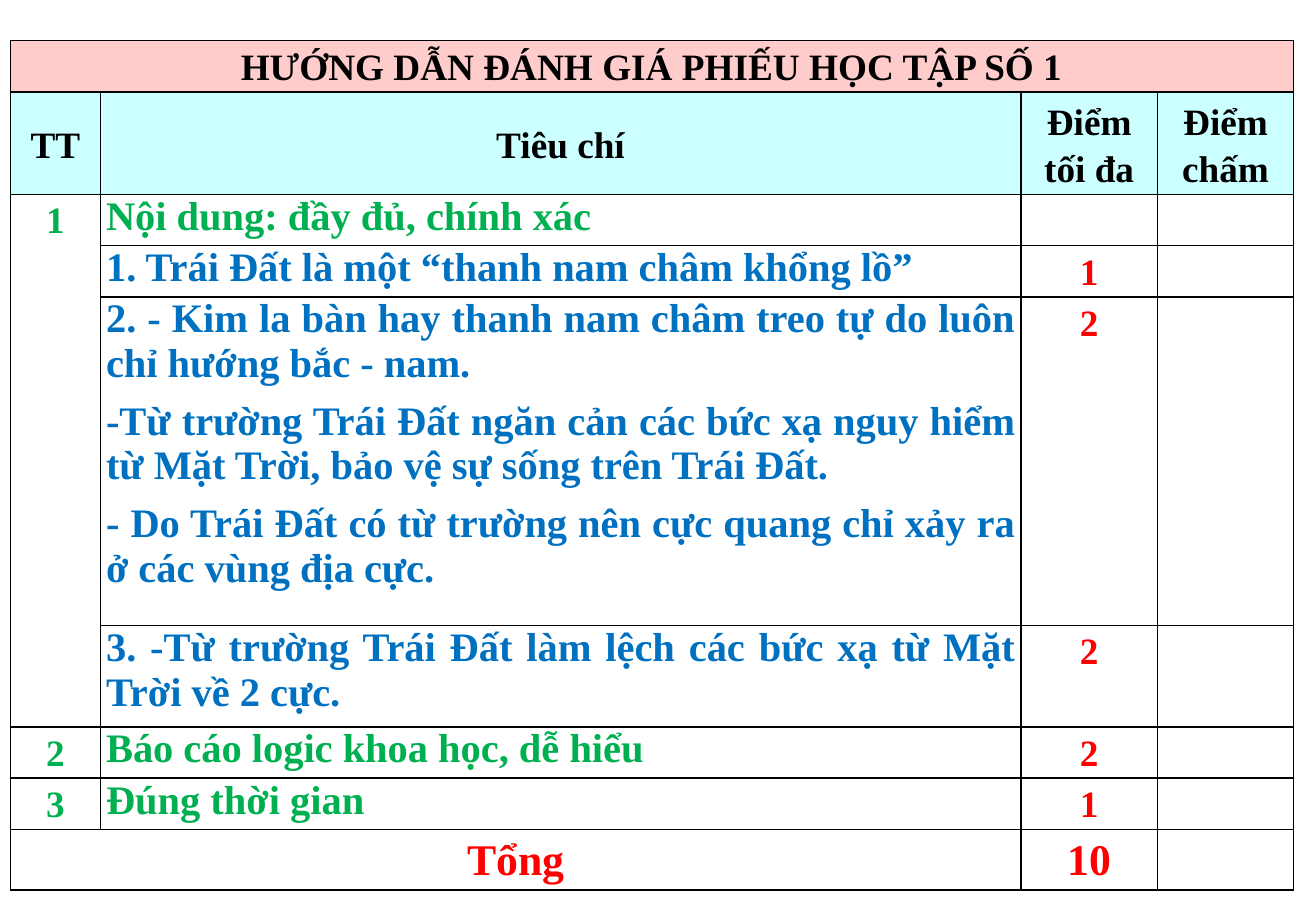
import pptx
import pptx.util
import pptx.oxml
import pptx.oxml.ns
import pptx.dml.color
import pptx.enum.text
from dataclasses import dataclass

PX = 9144  # EMU in one px, 100 px to the inch
ALIGN = pptx.enum.text.PP_ALIGN
ANCHOR = pptx.enum.text.MSO_ANCHOR


@dataclass(frozen=True)
class Theme:
    font: str = "Times New Roman"
    black: str = "000000"
    green: str = "00B050"
    blue: str = "0070C0"
    red: str = "FF0000"
    pink: str = "FFCCCC"
    cyan: str = "CCFFFF"
    base: int = 23
    body: int = 25
    total: int = 27
    line: int = 1


THEME = Theme()

COLS = [77, 790, 117, 117]
ROWS = [44, 88, 44, 44, 282, 87, 44, 44, 52]

TITLE = "HƯỚNG DẪN ĐÁNH GIÁ PHIẾU HỌC TẬP SỐ 1"
HEADS = ["TT", "Tiêu chí", "Điểm tối đa", "Điểm chấm"]
# number, criterion paragraphs, colour, top score
ITEMS = [
    ("1", ["Nội dung: đầy đủ, chính xác"], THEME.green, ""),
    ("", ["1. Trái Đất là một “thanh nam châm khổng lồ”"], THEME.blue, "1"),
    ("", ["2. - Kim la bàn hay thanh nam châm treo tự do luôn chỉ hướng bắc - nam.",
          "-Từ trường Trái Đất ngăn cản các bức xạ nguy hiểm từ Mặt Trời, "
          "bảo vệ sự sống trên Trái Đất.",
          "- Do Trái Đất có từ trường nên cực quang chỉ xảy ra ở các vùng địa cực."],
     THEME.blue, "2"),
    ("", ["3. -Từ trường Trái Đất làm lệch các bức xạ từ Mặt Trời về 2 cực."],
     THEME.blue, "2"),
    ("2", ["Báo cáo logic khoa học, dễ hiểu"], THEME.green, "2"),
    ("3", ["Đúng thời gian"], THEME.green, "1"),
]


def px(count):
    return pptx.util.Emu(count * PX)


def rgb(code):
    return pptx.dml.color.RGBColor.from_string(code)


def write(cell, *texts, size=THEME.base, color=THEME.black, align=ALIGN.CENTER,
          pitch=1.15, before=None, after=None, anchor=ANCHOR.TOP):
    """Put each text in the cell as one bold paragraph."""
    cell.vertical_anchor = anchor
    frame = cell.text_frame
    for index, text in enumerate(texts):
        para = frame.add_paragraph() if index else frame.paragraphs[0]
        para.alignment = align
        para.line_spacing = pitch
        if before is not None:
            para.space_before = pptx.util.Pt(before)
        if after is not None:
            para.space_after = pptx.util.Pt(after)
        run = para.add_run()
        run.text = text
        run.font.name = THEME.font
        run.font.size = pptx.util.Pt(size)
        run.font.bold = True
        run.font.color.rgb = rgb(color)


def border(cell):
    props = cell._tc.get_or_add_tcPr()
    width = pptx.util.Pt(THEME.line)
    space = pptx.oxml.ns.nsdecls("a")
    for index, side in enumerate("LRTB"):
        props.insert(index, pptx.oxml.parse_xml(
            f'<a:ln{side} {space} w="{width}"><a:solidFill>'
            f'<a:srgbClr val="{THEME.black}"/></a:solidFill></a:ln{side}>'))


def style(cell, fill):
    cell.margin_left = cell.margin_right = px(5)
    cell.margin_top = cell.margin_bottom = 0
    if fill:
        cell.fill.solid()
        cell.fill.fore_color.rgb = rgb(fill)
    else:
        cell.fill.background()
    border(cell)


def make_grid(slide, left, top):
    """Add the empty ruled table and return it."""
    frame = slide.shapes.add_table(len(ROWS), len(COLS), px(left), px(top),
                                   px(sum(COLS)), px(sum(ROWS)))
    grid = frame.table
    grid.first_row = grid.horz_banding = False
    for col, width in zip(grid.columns, COLS):
        col.width = px(width)
    fills = {0: THEME.pink, 1: THEME.cyan}
    for index, (row, height) in enumerate(zip(grid.rows, ROWS)):
        row.height = px(height)
        for cell in row.cells:
            style(cell, fills.get(index))
    return grid


def fill_head(grid):
    grid.cell(0, 0).merge(grid.cell(0, 3))
    write(grid.cell(0, 0), TITLE)
    for col, text in enumerate(HEADS):
        write(grid.cell(1, col), text, anchor=ANCHOR.MIDDLE)


def fill_items(grid, first):
    grid.cell(first, 0).merge(grid.cell(first + 3, 0))
    for row, (number, texts, color, score) in enumerate(ITEMS, first):
        gaps = {"before": 6, "after": 2} if len(texts) > 1 else {}
        write(grid.cell(row, 1), *texts, size=THEME.body, color=color,
              align=ALIGN.JUSTIFY, pitch=1.0, **gaps)
        if number:
            write(grid.cell(row, 0), number, color=THEME.green)
        if score:
            write(grid.cell(row, 2), score, color=THEME.red)


def fill_total(grid, row):
    grid.cell(row, 0).merge(grid.cell(row, 1))
    for col, text in ((0, "Tổng"), (2, "10")):
        write(grid.cell(row, col), text, size=THEME.total, color=THEME.red)


def rubric(slide, left, top):
    grid = make_grid(slide, left, top)
    fill_head(grid)
    fill_items(grid, 2)
    fill_total(grid, len(ROWS) - 1)


def main():
    deck = pptx.Presentation()
    deck.slide_width, deck.slide_height = px(1129), px(787)
    rubric(deck.slides.add_slide(deck.slide_layouts[6]), 9, 35)
    deck.save("out.pptx")


if __name__ == "__main__":
    main()
